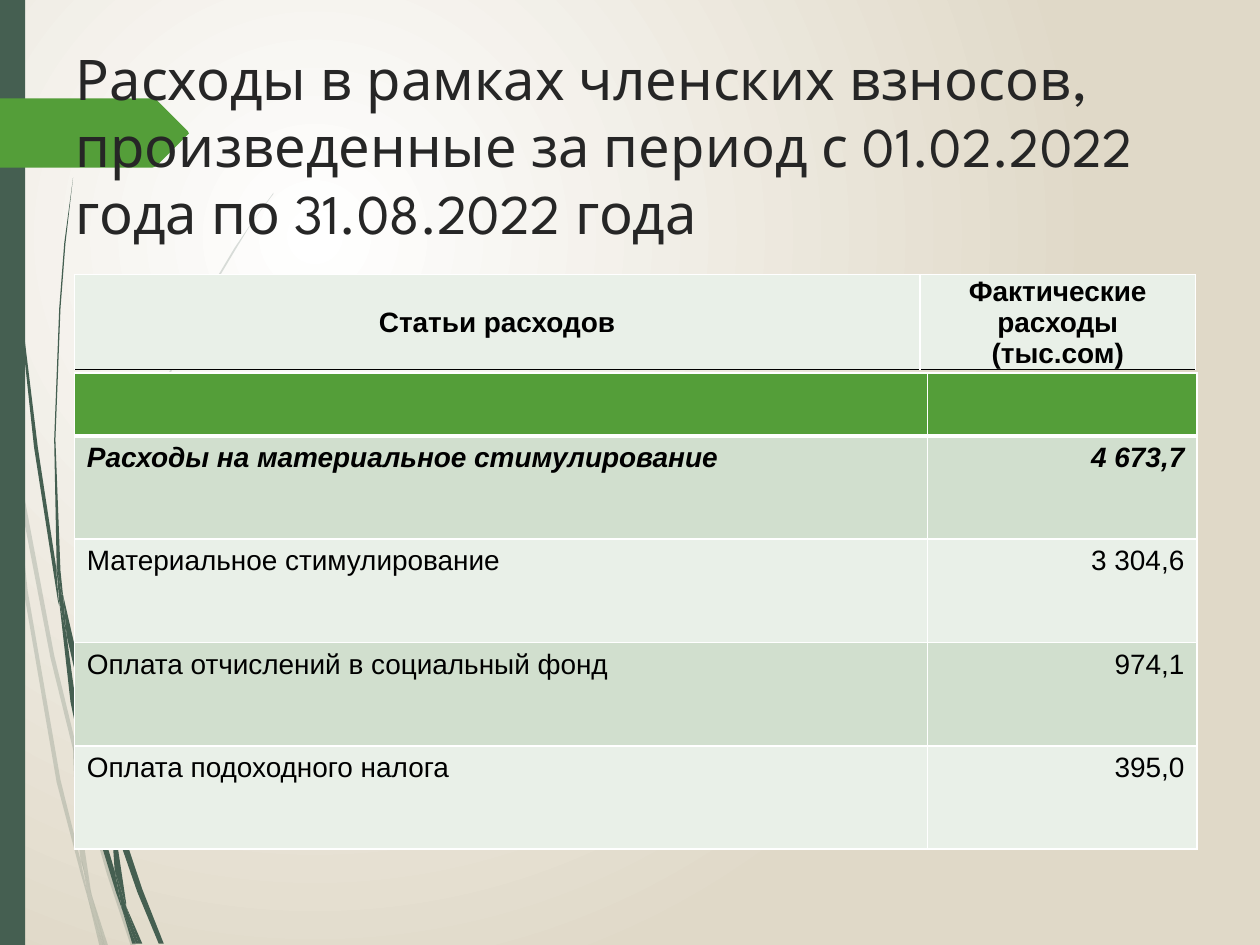
from lxml import etree
from pptx import Presentation
from pptx import util as u
from pptx.dml.color import RGBColor
from pptx.enum import shapes, text
from pptx.oxml.ns import qn

COLORS = {
    "white": "FFFFFF", "sand": "E0D9C8", "pine": "455F51", "green": "549E39",
    "ink": "262626", "black": "000000", "pale": "E9F0E8", "sage": "D1DFCE",
}
LEFT, CENTER, RIGHT = text.PP_ALIGN.LEFT, text.PP_ALIGN.CENTER, text.PP_ALIGN.RIGHT

FADED_STEMS = [
    [(0.08, 3.5), (0.06, 3.22), (0, 2.82), (0, 2.99), (0.07, 3.44)],
    [(0.4, 5.22), (0.59, 5.99), (0.59, 5.86), (0.43, 5.2), (0.1, 3.45), (0.12, 3.76)],
    [(0.64, 6.07), (0.61, 5.96), (0.61, 6.1), (0.85, 6.94), (1.04, 7.51), (1.08, 7.51),
     (0.88, 6.92)],
    [(0.83, 7.51), (0.86, 7.51), (0.73, 7.11)],
    [(0.64, 6.83), (0.48, 6.19), (0.22, 4.69), (0.12, 3.76), (0.08, 3.5), (0.19, 4.7),
     (0.45, 6.21), (0.64, 6.93), (0.7, 7.14), (0.69, 7.07)],
    [(0.58, 5.99), (0.6, 6.46), (0.64, 6.83), (0.67, 6.92), (0.73, 7.11), (0.72, 7.06),
     (0.63, 6.46), (0.61, 6.1), (0.61, 6.08)],
    [(0.61, 5.84), (0.76, 4.62), (1.11, 3.49), (1.59, 2.45), (1.87, 1.98), (2.01, 1.75),
     (2.17, 1.54), (2.17, 1.53), (2.01, 1.75), (1.86, 1.97), (1.58, 2.44), (1.1, 3.48),
     (0.75, 4.61), (0.59, 5.84), (0.59, 5.86), (0.61, 5.96)],
    [(0.7, 7.14), (0.79, 7.51), (0.82, 7.51)],
    [(0.61, 6.08), (0.61, 6.1), (0.61, 5.96), (0.59, 5.86), (0.58, 5.99)],
    [(0.67, 6.92), (0.65, 6.83), (0.69, 7.07), (0.7, 7.14), (0.82, 7.51), (0.83, 7.51),
     (0.73, 7.11)],
]
DARK_STEMS = [
    [(0.05, 1.1), (0.14, 2.33), (0.27, 3.55), (0.46, 4.77), (0.47, 4.81), (0.45, 4.57),
     (0.45, 4.53), (0.3, 3.55), (0.15, 2.32), (0.06, 1.09), (0.04, 0.48), (0.03, 0),
     (0.02, 0), (0.03, 0.48)],
    [(0.73, 5.92), (0.88, 6.45), (0.88, 6.33), (0.88, 6.31), (0.77, 5.9), (0.5, 4.72),
     (0.53, 5.05)],
    [(0.94, 6.49), (0.91, 6.41), (0.91, 6.56), (1.09, 7.08), (1.26, 7.49), (1.3, 7.49),
     (1.13, 7.06)],
    [(0.91, 6.91), (0.81, 6.57), (0.6, 5.56), (0.53, 5.05), (0.47, 4.77), (0.56, 5.57),
     (0.77, 6.59), (0.92, 7.08), (0.97, 7.22), (0.96, 7.17)],
    [(0.5, 4.72), (0.48, 4.53), (0.44, 3.49), (0.48, 2.45), (0.52, 1.93), (0.58, 1.41),
     (0.51, 1.93), (0.47, 2.45), (0.43, 3.49), (0.45, 4.49), (0.49, 4.72)],
    [(1.1, 7.49), (1.13, 7.49), (1, 7.19)],
    [(0.47, 4.77), (0.53, 5.05), (0.5, 4.72), (0.49, 4.72), (0.45, 4.49), (0.45, 4.53)],
    [(0.91, 6.33), (1.03, 5.52), (1.31, 4.76), (1.69, 4.06), (1.91, 3.74), (2.03, 3.59),
     (2.16, 3.44), (2.15, 3.44), (2.03, 3.58), (1.91, 3.73), (1.68, 4.05), (1.29, 4.74),
     (1.01, 5.51), (0.88, 6.31), (0.91, 6.41)],
    [(0.97, 7.22), (1.05, 7.49), (1.08, 7.49)],
    [(0.88, 6.45), (0.91, 6.91), (0.96, 7.06), (1, 7.19), (1, 7.16), (0.91, 6.56),
     (0.9, 6.51)],
    [(0.88, 6.45), (0.9, 6.51), (0.91, 6.56), (0.91, 6.41), (0.88, 6.31), (0.88, 6.33)],
    [(0.96, 7.06), (0.91, 6.91), (0.96, 7.17), (0.97, 7.22), (1.08, 7.49), (1.1, 7.49),
     (1, 7.19)],
]
TITLE_TAG = [(0, 0.78), (1.21, 0.78), (1.24, 0.79), (1.49, 1.04), (1.5, 1.06),
             (1.49, 1.07), (1.24, 1.32), (1.21, 1.33), (0, 1.33)]
EXPENSES = [
    ("Расходы на материальное стимулирование", "4 673,7"),
    ("Материальное стимулирование", "3 304,6"),
    ("Оплата отчислений в социальный фонд", "974,1"),
    ("Оплата подоходного налога", "395,0"),
]


def rgb(color):
    return RGBColor.from_string(COLORS[color])


def write(frame, content, size=16, font="Arial", color="black", bold=False,
          italic=False, align=LEFT):
    frame.text = content
    for paragraph in frame.paragraphs:
        paragraph.alignment = align
        for run in paragraph.runs:
            run.font.size, run.font.name = u.Pt(size), font
            run.font.bold, run.font.italic = bold, italic
            run.font.color.rgb = rgb(color)


class ExpenseSlide:
    def __init__(self, deck):
        self.slide = deck.slides.add_slide(deck.slide_layouts[5])

    def background(self, inner, outer):
        fill = self.slide.background.fill
        fill.gradient()
        for stop, color in zip(fill.gradient_stops, (inner, outer)):
            stop.color.rgb = rgb(color)
        linear = self.slide.element.find(".//" + qn("a:lin"))
        gradient = linear.getparent()
        gradient.remove(linear)
        circle = etree.SubElement(gradient, qn("a:path"), path="circle")
        etree.SubElement(circle, qn("a:fillToRect"), l="50000", t="50000",
                         r="100000", b="100000")

    def paint(self, shape, color, opacity=100):
        shape.shadow.inherit = False
        shape.fill.solid()
        shape.fill.fore_color.rgb = rgb(color)
        shape.line.fill.background()
        if opacity < 100:
            shade = shape.element.spPr.find(qn("a:solidFill"))[0]
            etree.SubElement(shade, qn("a:alpha"), val=str(opacity * 1000))

    def outline(self, points, color, opacity=100):
        start, *rest = [(u.Inches(x), u.Inches(y)) for x, y in points]
        builder = self.slide.shapes.build_freeform(*start)
        builder.add_line_segments(rest, close=True)
        self.paint(builder.convert_to_shape(), color, opacity)

    def bar(self, box, color):
        place = [u.Inches(n) for n in box]
        self.paint(self.slide.shapes.add_shape(shapes.MSO_SHAPE.RECTANGLE, *place), color)

    def title(self, content, box):
        heading = self.slide.shapes.title
        heading.left, heading.top, heading.width, heading.height = map(u.Inches, box)
        self.slide.shapes.element.append(heading.element)
        write(heading.text_frame, content, size=32, font="League Spartan", color="ink")
        heading.text_frame.word_wrap = True
        heading.text_frame.auto_size = text.MSO_AUTO_SIZE.NONE
        heading.text_frame.vertical_anchor = text.MSO_ANCHOR.TOP

    def table(self, left, top, widths, heights):
        place = [u.Inches(n) for n in (left, top, sum(widths), sum(heights))]
        grid = self.slide.shapes.add_table(len(heights), len(widths), *place).table
        grid.first_row = grid.horz_banding = False
        for column, width in zip(grid.columns, widths):
            column.width = u.Inches(width)
        for row, height in zip(grid.rows, heights):
            row.height = u.Inches(height)
        return grid

    def cell(self, cell, fill, content="", top=1, bottom=1, bottom_color="white", **fmt):
        properties = cell._tc.get_or_add_tcPr()
        edges = {"lnL": ("white", 1), "lnR": ("white", 1),
                 "lnT": ("white", top), "lnB": (bottom_color, bottom)}
        for edge, (color, width) in edges.items():
            line = etree.SubElement(properties, qn("a:" + edge), w=str(u.Pt(width)))
            solid = etree.SubElement(line, qn("a:solidFill"))
            etree.SubElement(solid, qn("a:srgbClr"), val=COLORS[color])
        cell.fill.solid()
        cell.fill.fore_color.rgb = rgb(fill)
        if content:
            write(cell.text_frame, content, **fmt)


def main():
    deck = Presentation()
    deck.slide_width, deck.slide_height = u.Inches(10), u.Inches(7.5)
    page = ExpenseSlide(deck)
    page.background("white", "sand")
    for stem in FADED_STEMS:
        page.outline(stem, "pine", opacity=20)
    for stem in DARK_STEMS:
        page.outline(stem, "pine")
    page.bar((0, 0, 0.2, 7.5), "pine")
    page.outline(TITLE_TAG, "green")
    page.title("Расходы в рамках членских взносов, произведенные за период "
               "с 01.02.2022 года по 31.08.2022 года", (0.5, 0.3, 9, 0.77))

    header = page.table(0.59, 2.18, (6.71, 2.19), (0.5,))
    captions = ("Статьи расходов", "Фактические расходы\n(тыс.сом)")
    for heading, caption in zip(header.rows[0].cells, captions):
        page.cell(heading, "pale", caption, bottom_color="black", bold=True, align=CENTER)
        heading.vertical_anchor = text.MSO_ANCHOR.MIDDLE
        heading.margin_left = heading.margin_right = heading.margin_top = u.Inches(0.01)
        heading.margin_bottom = 0

    expenses = page.table(0.59, 2.96, (6.77, 2.14), [0.5] + [0.82] * len(EXPENSES))
    for band in expenses.rows[0].cells:
        page.cell(band, "green", bottom=3)
    for number, entry in enumerate(EXPENSES):
        is_total = number == 0
        for column, (content, align) in enumerate(zip(entry, (LEFT, RIGHT))):
            page.cell(expenses.cell(number + 1, column), ("sage", "pale")[number % 2],
                      content, top=3 if is_total else 1, bold=is_total,
                      italic=is_total, align=align)
    deck.save("out.pptx")


if __name__ == "__main__":
    main()
